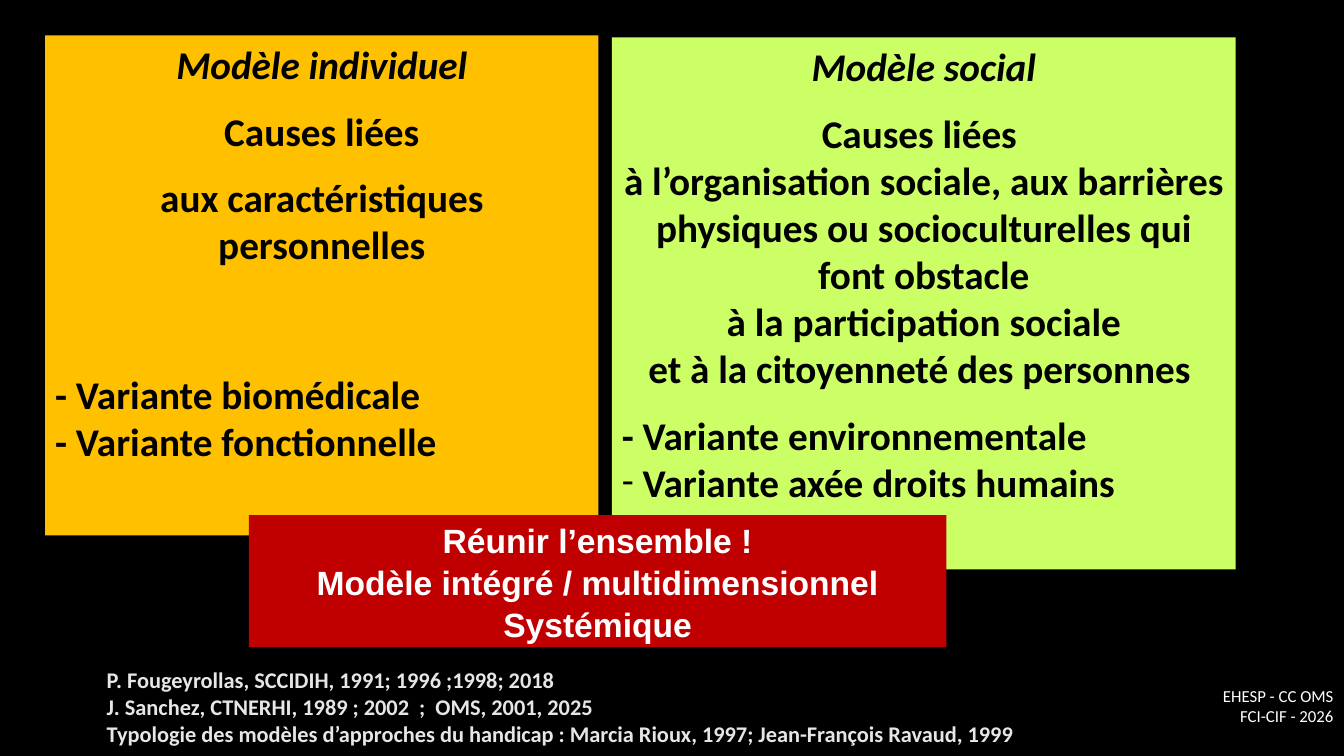
import pptx
import pptx.dml.color
import pptx.enum.shapes
import pptx.enum.text
import pptx.oxml.ns
import pptx.util
import lxml.etree

Cm = pptx.util.Cm
Pt = pptx.util.Pt
ALIGN = pptx.enum.text.PP_ALIGN
ANCHOR = pptx.enum.text.MSO_ANCHOR

COLOURS = {
    "background": "000000",
    "ink": "000000",
    "individual": "FFC000",
    "social": "CCFF66",
    "integrated": "C00000",
    "white": "FFFFFF",
    "grey": "E7E6E6",
}
GAP = {"space_before": Pt(14)}
CENTRE = {"alignment": ALIGN.CENTER}
CENTRE_GAP = {**CENTRE, **GAP}
HEADING = {"italic": True}


def colour(name):
    return pptx.dml.color.RGBColor.from_string(COLOURS[name])


def apply(target, values):
    for name, value in values.items():
        setattr(target, name, value)


class SlideBuilder:
    def __init__(self, deck):
        self.slide = deck.slides.add_slide(deck.slide_layouts[6])
        fill = self.slide.background.fill
        fill.solid()
        fill.fore_color.rgb = colour("background")

    def panel(self, place, fill, lines, ink, font, anchor=ANCHOR.TOP):
        box = self.slide.shapes.add_shape(
            pptx.enum.shapes.MSO_SHAPE.RECTANGLE, *map(Cm, place))
        box.shadow.inherit = False
        box.fill.solid()
        box.fill.fore_color.rgb = colour(fill)
        box.line.fill.background()
        self.fill_text(box, lines, ink, font, anchor)

    def note(self, place, lines, ink, font):
        box = self.slide.shapes.add_textbox(*map(Cm, place))
        self.fill_text(box, lines, ink, font, ANCHOR.TOP)

    def fill_text(self, box, lines, ink, font, anchor):
        frame = box.text_frame
        apply(frame, {"word_wrap": True, "vertical_anchor": anchor})
        for index, (text, layout, emphasis, bullet) in enumerate(lines):
            para = frame.add_paragraph() if index else frame.paragraphs[0]
            apply(para, {"alignment": ALIGN.LEFT, **layout})
            if bullet:
                self.bullet(para, bullet)
            para.text = text
            for span in para.runs:
                apply(span.font, {**font, **emphasis})
                span.font.color.rgb = colour(ink)

    def bullet(self, para, character):
        properties = para._p.get_or_add_pPr()
        properties.set("marL", "0")
        properties.set("indent", "0")
        for tag, name, value in (("a:buFont", "typeface", "Calibri"),
                                 ("a:buChar", "char", character)):
            element = lxml.etree.SubElement(properties, pptx.oxml.ns.qn(tag))
            element.set(name, value)


def line(text, layout={}, emphasis={}, bullet=None):
    return text, layout, emphasis, bullet


def main():
    deck = pptx.Presentation()
    apply(deck, {"slide_width": Cm(33.87), "slide_height": Cm(19.05)})
    page = SlideBuilder(deck)
    model_font = {"name": "Calibri", "size": Pt(28), "bold": True}
    title_font = {"name": "Arial", "size": Pt(24), "bold": True}
    source_font = {"name": "Calibri", "size": Pt(16), "bold": True}
    footer_font = {"name": "Calibri", "size": Pt(12)}
    title_layout = {**CENTRE, "line_spacing": 1.05}

    page.panel((1.14, 0.89, 13.94, 12.6), "individual", [
        line("Modèle individuel", CENTRE, HEADING),
        line("Causes liées", CENTRE_GAP),
        line("aux caractéristiques personnelles", CENTRE_GAP),
        line("- Variante biomédicale", {"space_before": Pt(73)}),
        line("- Variante fonctionnelle"),
    ], "ink", model_font)

    page.panel((15.42, 0.94, 15.72, 13.41), "social", [
        line("Modèle social", CENTRE, HEADING),
        line("Causes liées ", CENTRE_GAP),
        line("à l’organisation sociale, aux barrières physiques ou "
             "socioculturelles qui font obstacle", CENTRE),
        line("à la participation sociale", CENTRE),
        line("et à la citoyenneté des personnes ", CENTRE),
        line("- Variante environnementale", GAP),
        line(" Variante axée droits humains", bullet="-"),
    ], "ink", model_font)

    page.panel((6.27, 12.98, 17.58, 3.33), "integrated", [
        line("Réunir l’ensemble !", title_layout),
        line("Modèle intégré / multidimensionnel", title_layout),
        line("Systémique", title_layout),
    ], "white", title_font, ANCHOR.MIDDLE)

    page.note((2.44, 16.66, 25.25, 3), [
        line("P. Fougeyrollas, SCCIDIH, 1991; 1996 ;1998; 2018\v"
             "J. Sanchez, CTNERHI, 1989 ; 2002  ;  OMS, 2001, 2025"),
        line("Typologie des modèles d’approches du handicap : "
             "Marcia Rioux, 1997; Jean-François Ravaud, 1999"),
    ], "grey", source_font)

    page.note((30.48, 17.15, 3.38, 1.47), [
        line("EHESP - CC OMS FCI-CIF - 2026", {"alignment": ALIGN.RIGHT}),
    ], "white", footer_font)

    deck.save("out.pptx")


if __name__ == "__main__":
    main()
